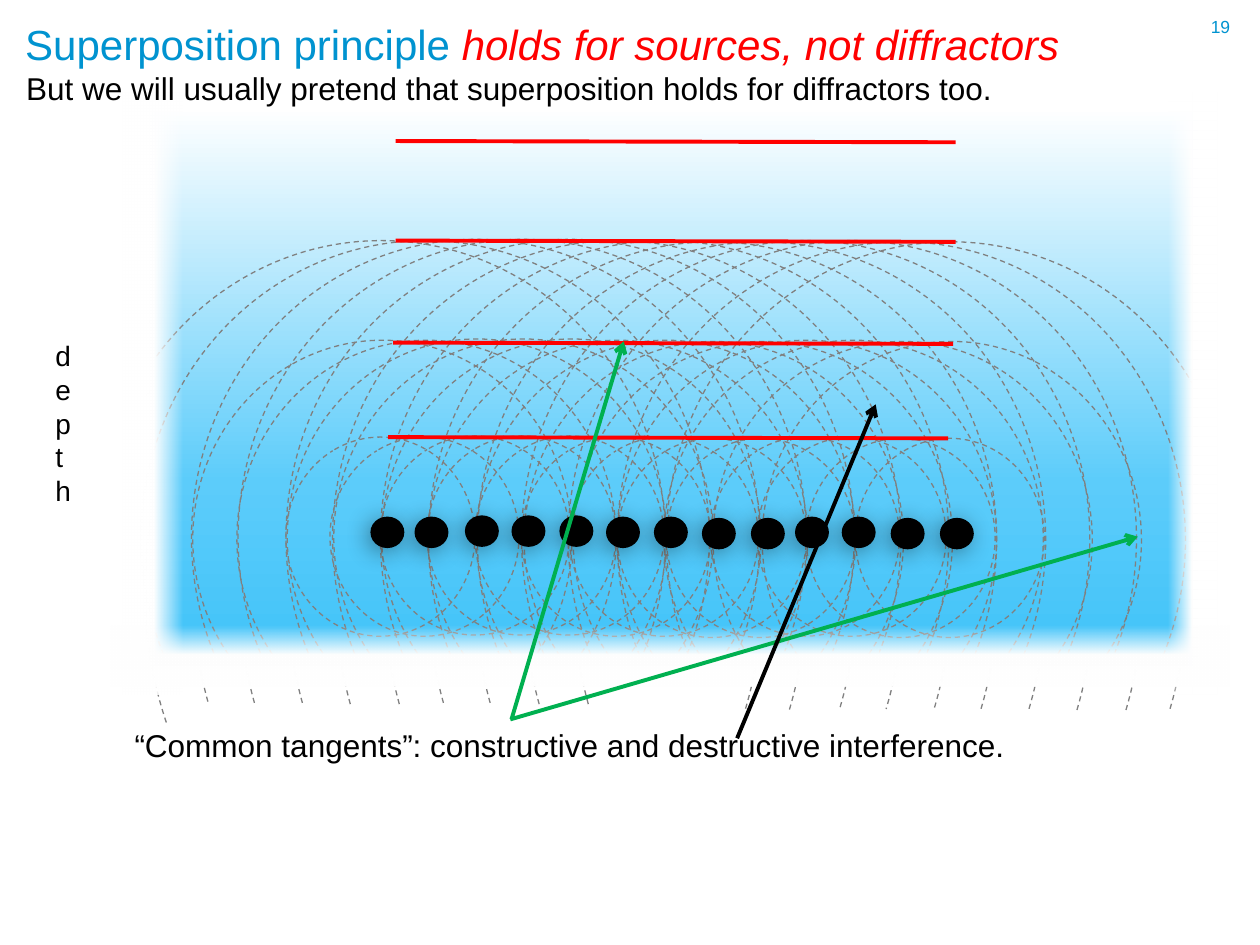
from lxml import etree
from pptx import Presentation
from pptx.dml.color import RGBColor
from pptx.enum.dml import MSO_LINE
from pptx.enum.shapes import MSO_CONNECTOR, MSO_SHAPE
from pptx.enum.text import MSO_ANCHOR, PP_ALIGN
from pptx.oxml.ns import qn
from pptx.util import Pt

ARC, OVAL, RECT = MSO_SHAPE.ARC, MSO_SHAPE.OVAL, MSO_SHAPE.RECTANGLE
STRAIGHT, DASH = MSO_CONNECTOR.STRAIGHT, MSO_LINE.DASH
LEFT, TOP = PP_ALIGN.LEFT, MSO_ANCHOR.TOP

BLACK = RGBColor(0, 0, 0)
WHITE = RGBColor(255, 255, 255)
GRAY = RGBColor(0x80, 0x80, 0x80)
RED = RGBColor(255, 0, 0)
GREEN = RGBColor(0, 0xB0, 0x50)
BLUE = RGBColor(0, 0x93, 0xD0)
DEEP = RGBColor(0x40, 0xC3, 0xF9)
MID = RGBColor(0x5C, 0xCC, 0xFA)

# Sources: centre x and y inside the water box
SOURCES = list(zip(
    [135.7, 160.9, 189.7, 216.3, 243.7, 270.3, 297.7,
     325.1, 353.1, 378.3, 405, 433, 461.1],
    [243, 243, 242.3, 242.3, 242.3, 243, 243,
     243.7, 243.7, 243, 243, 243.7, 243.7]))
LAST = len(SOURCES) - 1

# Rings: width, height, shift from source, usual start and end, own starts
# and ends by source; a full turn is 216 adjustment units
OUTER = (433.4, 453.6, -2.5, 34.2, 97.85, 10.84,
         {0: 140.01, 1: 134.52, 2: 126.36, 3: 95.88},
         {LAST - 2: 199.55, LAST - 1: 191.11, LAST: 185.64})
INNER = [
    (216.7, 226.8, -2.9, 3.6, 85.8, 22.08, {}, {}),
    (324.7, 340.6, -3.6, 3.6, 92.58, 14.08, {0: 130.36}, {LAST: 196.97}),
    (108, 113.8, -4, 2.5, 145.29, 144.56, {}, {}),
]


def add(parent, tag, **attrs):
    return etree.SubElement(parent, qn(tag), attrs)


def add_shape(slide, kind, left, top, width, height):
    shape = slide.shapes.add_shape(kind, Pt(left), Pt(top), Pt(width), Pt(height))
    shape.shadow.inherit = False
    shape.line.fill.background()
    return shape


def shade(shape, stops, angle):
    """Fill with a gradient of (percent, colour, opacity percent) stops."""
    shape.fill.gradient()
    shape.fill.gradient_angle = angle
    stop_list = next(shape._element.spPr.iter(qn("a:gsLst")))
    for old in list(stop_list):
        stop_list.remove(old)
    for place, color, alpha in stops:
        stop = add(stop_list, "a:gs", pos=str(place * 1000))
        tint = add(stop, "a:srgbClr", val=str(color))
        if alpha < 100:
            add(tint, "a:alpha", val=str(alpha * 1000))


def add_text(slide, box, text, size, color=BLACK):
    shape = slide.shapes.add_textbox(*map(Pt, box))
    shape.text_frame.word_wrap = True
    para = shape.text_frame.paragraphs[0]
    para.text = text
    para.font.size, para.font.name = Pt(size), "Arial"
    para.font.color.rgb = color
    return shape


def add_line(slide, box, ends, color, arrow=False):
    left, top = box[:2]
    x1, y1, x2, y2 = ends
    line = slide.shapes.add_connector(STRAIGHT, Pt(left + x1), Pt(top + y1),
                                      Pt(left + x2), Pt(top + y2))
    line.line.width = Pt(2.25)
    line.line.color.rgb = color
    if arrow:
        add(line.line._get_or_add_ln(), "a:tailEnd", type="arrow")
    add(line._element.spPr, "a:effectLst")


def add_rings(slide, box, ring):
    """Draw one dashed arc around each source."""
    width, height, dx, dy, start, end, starts, ends = ring
    for i, (x, y) in enumerate(SOURCES):
        arc = add_shape(slide, ARC, box[0] + x + dx - width / 2,
                        box[1] + y + dy - height / 2, width, height)
        arc.adjustments[0] = starts.get(i, start)
        arc.adjustments[1] = ends.get(i, end)
        arc.fill.background()
        arc.line.color.rgb = GRAY
        arc.line.width = Pt(0.75)
        arc.line.dash_style = DASH


def add_dots(slide, box):
    for x, y in SOURCES:
        dot = add_shape(slide, OVAL, box[0] + x - 9.7, box[1] + y - 9, 19.4, 18)
        dot.fill.solid()
        dot.fill.fore_color.rgb = BLACK
        effects = dot._element.spPr.find(qn("a:effectLst"))
        glow = add(effects, "a:outerShdw", blurRad=str(Pt(14)), dist=str(Pt(3)),
                   dir="8100000", rotWithShape="0")
        tint = add(glow, "a:srgbClr", val=str(BLACK))
        add(tint, "a:alpha", val="40000")


def add_fades(slide, box):
    """Blend the left, right and bottom edges of the water into the page."""
    for x, y, width, height, flip, turn in [
            (-15.8, -8.6, 34.6, 344.2, True, 0),
            (581.8, -8.6, 28.1, 344.2, False, 0),
            (280.1, -5.8, 34.6, 639.4, True, 270)]:
        fade = add_shape(slide, RECT, box[0] + x, box[1] + y, width, height)
        shade(fade, [(0, WHITE, 0), (48, WHITE, 100)], 0)
        fade.rotation = turn
        if flip:
            fade._element.spPr.find(qn("a:xfrm")).set("flipH", "1")


def add_water(slide, box):
    add_rings(slide, box, OUTER)
    water = add_shape(slide, RECT, *box)
    shade(water, [(0, DEEP, 100), (33, MID, 100), (100, WHITE, 100)], 90)
    for ring in INNER:
        add_rings(slide, box, ring)
    add_dots(slide, box)
    add_fades(slide, box)


def add_fronts(slide, box):
    # Plane wave fronts
    for x, y in [(136.1, 188.6), (139, 134.6), (140.4, 76.3), (140.4, 19.4)]:
        add_line(slide, box, (x, y, x + 320, y + 0.7), RED)
    # Arrows from the caption
    for ends, color in [((205.9, 349.9, 564.5, 245.5), GREEN),
                        ((206.6, 349.9, 270.7, 133.9), GREEN),
                        ((335.5, 360.7, 414.7, 169.9), BLACK)]:
        add_line(slide, box, ends, color, arrow=True)


def trim(frame):
    frame.margin_left = frame.margin_right = 0
    frame.margin_top = frame.margin_bottom = 0


def add_head(slide, box):
    title = slide.shapes.title
    title.left, title.top, title.width, title.height = map(Pt, box)
    frame = title.text_frame
    trim(frame)
    frame.word_wrap = True
    frame.vertical_anchor = TOP
    para = frame.paragraphs[0]
    para.alignment, para.line_spacing = LEFT, 0.9
    para.font.size, para.font.name = Pt(24), "Arial"
    for text, color, slant in [
            ("Superposition principle ", BLUE, False),
            ("holds for sources, not diffractors", RED, True)]:
        run = para.add_run()
        run.text = text
        run.font.color.rgb = color
        run.font.italic = slant


def add_number(slide, box):
    frame = add_text(slide, box, "19", 10, BLUE).text_frame
    trim(frame)
    frame.paragraphs[0].line_spacing = Pt(12)


def main():
    deck = Presentation()
    deck.slide_width, deck.slide_height = Pt(720), Pt(540)
    slide = deck.slides.add_slide(deck.slide_layouts[5])
    water = (85.7, 61.2, 599, 319.7)

    add_head(slide, (14.4, 13.7, 628.6, 29.5))
    add_water(slide, water)
    add_number(slide, (691.9, 9.4, 21.6, 18.7))
    add_text(slide, (69.8, 411.1, 618.5, 28.8),
             "“Common tangents”: constructive and destructive interference.", 18)
    add_fronts(slide, water)
    depth = add_text(slide, (24.5, 190.1, 35.3, 118.8), "depth", 16)
    depth.text_frame._txBody.bodyPr.set("vert", "wordArtVert")
    add_text(slide, (7.9, 36, 618.5, 28.8),
             "But we will usually pretend that superposition holds for "
             "diffractors too.", 18)
    deck.save("out.pptx")


if __name__ == "__main__":
    main()
